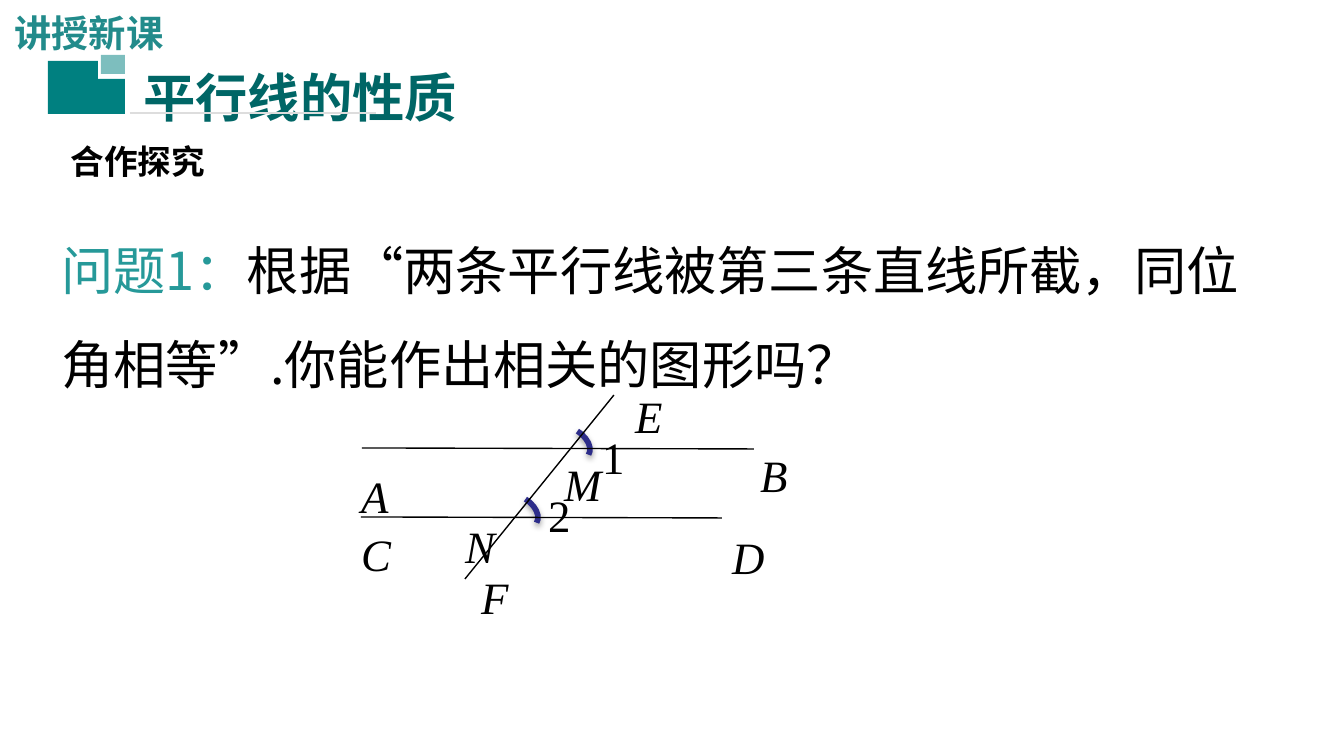
from lxml import etree
from pptx import Presentation, util as u
from pptx.dml.color import RGBColor
from pptx.enum import shapes, text
from pptx.oxml.ns import qn

PX = 914400 / 134.4
TEAL = RGBColor(0x00, 0x80, 0x80)
TITLE_TEAL = RGBColor(0x00, 0x66, 0x66)
HEADER_TEAL = RGBColor(0x22, 0x8B, 0x8B)
QUESTION_TEAL = RGBColor(0x26, 0x99, 0x99)
RULE_GREY = RGBColor(0xDD, 0xDD, 0xDD)
ARC_BLUE = RGBColor(0x2D, 0x2D, 0x8A)
BLACK = RGBColor(0, 0, 0)
CJK = "Noto Sans CJK SC"
LATIN = "Times New Roman"


def px(value):
    return u.Emu(round(value * PX))


def add_xml(parent, tag, **attributes):
    return etree.SubElement(parent, qn(tag), attributes)


class SlideBuilder:
    def __init__(self, slide):
        self.slide = slide

    def set_text(self, shape, parts, size, font=CJK, bold=False, italic=False,
                 align=text.PP_ALIGN.LEFT, anchor=text.MSO_ANCHOR.TOP, spacing=1, wrap=True):
        """Fill a shape with one paragraph made of (wording, colour) parts."""
        frame = shape.text_frame
        frame.word_wrap = wrap
        frame.auto_size = text.MSO_AUTO_SIZE.NONE
        frame.vertical_anchor = anchor
        paragraph = frame.paragraphs[0]
        paragraph.alignment = align
        paragraph.line_spacing = spacing
        paragraph.space_before = u.Pt(0)
        style = paragraph.font
        style.size, style.name = u.Pt(size), font
        style.bold, style.italic = bold, italic
        properties = paragraph._p.get_or_add_pPr()
        add_xml(properties.find(qn("a:defRPr")), "a:ea",
                typeface=font if font == LATIN else CJK)
        for wording, color in parts:
            run = paragraph.add_run()
            run.text = wording
            run.font.color.rgb = color
        return paragraph

    def placeholder(self, index, box, parts, size, **style):
        shape = self.slide.placeholders[index]
        shape.left, shape.top, shape.width, shape.height = map(px, box)
        paragraph = self.set_text(shape, parts, size, **style)
        properties = paragraph._p.get_or_add_pPr()
        properties.set("marL", "0")
        properties.set("indent", "0")
        properties.find(qn("a:defRPr")).addprevious(
            properties.makeelement(qn("a:buNone"), {}))

    def label(self, box, wording, size, color=BLACK, **style):
        shape = self.slide.shapes.add_textbox(*map(px, box))
        self.set_text(shape, [(wording, color)], size, **style)

    def block(self, kind, box, fill=None, alpha=None):
        shape = self.slide.shapes.add_shape(kind, *map(px, box))
        shape.shadow.inherit = False
        shape.line.fill.background()
        if fill is None:
            shape.fill.background()
        else:
            shape.fill.solid()
            shape.fill.fore_color.rgb = fill
        if alpha is not None:
            color = shape._element.spPr.find(qn("a:solidFill"))[0]
            add_xml(color, "a:alpha", val=str(alpha * 1000))
        return shape

    def outline(self, points, fill):
        builder = self.slide.shapes.build_freeform(*points[0], scale=PX)
        builder.add_line_segments(points[1:], close=True)
        shape = builder.convert_to_shape()
        shape.shadow.inherit = False
        shape.fill.solid()
        shape.fill.fore_color.rgb = fill
        shape.line.fill.background()

    def line(self, start, end, color=BLACK, width=0.75):
        connector = self.slide.shapes.add_connector(
            shapes.MSO_CONNECTOR.STRAIGHT, *map(px, start + end))
        connector.line.color.rgb = color
        connector.line.width = u.Pt(width)
        add_xml(connector._element.spPr, "a:effectLst")

    def angle_arc(self, box):
        shape = self.block(shapes.MSO_SHAPE.ARC, box)
        shape.rotation = 32.2
        shape.line.color.rgb = ARC_BLUE
        shape.line.width = u.Pt(3)
        effects = shape._element.spPr.find(qn("a:effectLst"))
        shadow = add_xml(effects, "a:outerShdw", blurRad=str(int(u.Pt(3.1))),
                         dist=str(int(u.Pt(1.8))), dir="5400000", rotWithShape="0")
        add_xml(add_xml(shadow, "a:srgbClr", val="000000"), "a:alpha", val="35000")


def main():
    presentation = Presentation()
    presentation.slide_width, presentation.slide_height = px(1344), px(756)
    slide = presentation.slides.add_slide(presentation.slide_layouts[1])
    builder = SlideBuilder(slide)

    # Header and title with its ornament
    builder.label((1, 4, 215, 59), "讲授新课", 20, HEADER_TEAL, font="Arial", bold=True)
    builder.line((130, 113), (376, 113), RULE_GREY, 1)
    builder.outline([(48, 61), (98, 61), (98, 79), (125, 79), (125, 114), (48, 114)], TEAL)
    builder.block(shapes.MSO_SHAPE.RECTANGLE, (101, 55, 24, 19), TEAL, 51)
    builder.placeholder(0, (130, 59, 344, 77), [("平行线的性质", TITLE_TEAL)], 28,
                        bold=True, wrap=False)

    # Section tag
    tag = builder.block(shapes.MSO_SHAPE.ROUNDED_RECTANGLE, (48, 138, 180, 47))
    builder.set_text(tag, [("合作探究", BLACK)], 18, bold=True,
                     align=text.PP_ALIGN.CENTER, anchor=text.MSO_ANCHOR.MIDDLE)

    # Question
    builder.placeholder(1, (48, 200, 1222, 203), [
        ("问题1：", QUESTION_TEAL),
        ("根据“两条平行线被第三条直线所截，同位角相等”.你能作出相关的图形吗？", BLACK),
    ], 28, spacing=1.5)

    # Parallel lines AB and CD cut by EF
    for left, top in ((548, 429), (496, 497)):
        builder.angle_arc((left, top, 44, 28))
    builder.line((614, 395), (465, 579))
    builder.line((754, 449), (362, 448))
    builder.line((722, 518), (361, 517))

    # Point and angle names
    names = {"A": (348, 462), "B": (747, 441), "C": (348, 520), "D": (719, 523),
             "E": (622, 382), "F": (468, 563), "M": (551, 450), "N": (452, 512),
             "1": (589, 423), "2": (535, 481)}
    for name, corner in names.items():
        builder.label(corner + (47, 67), name, 24, font=LATIN, italic=name.isalpha())

    presentation.save("out.pptx")


if __name__ == "__main__":
    main()
